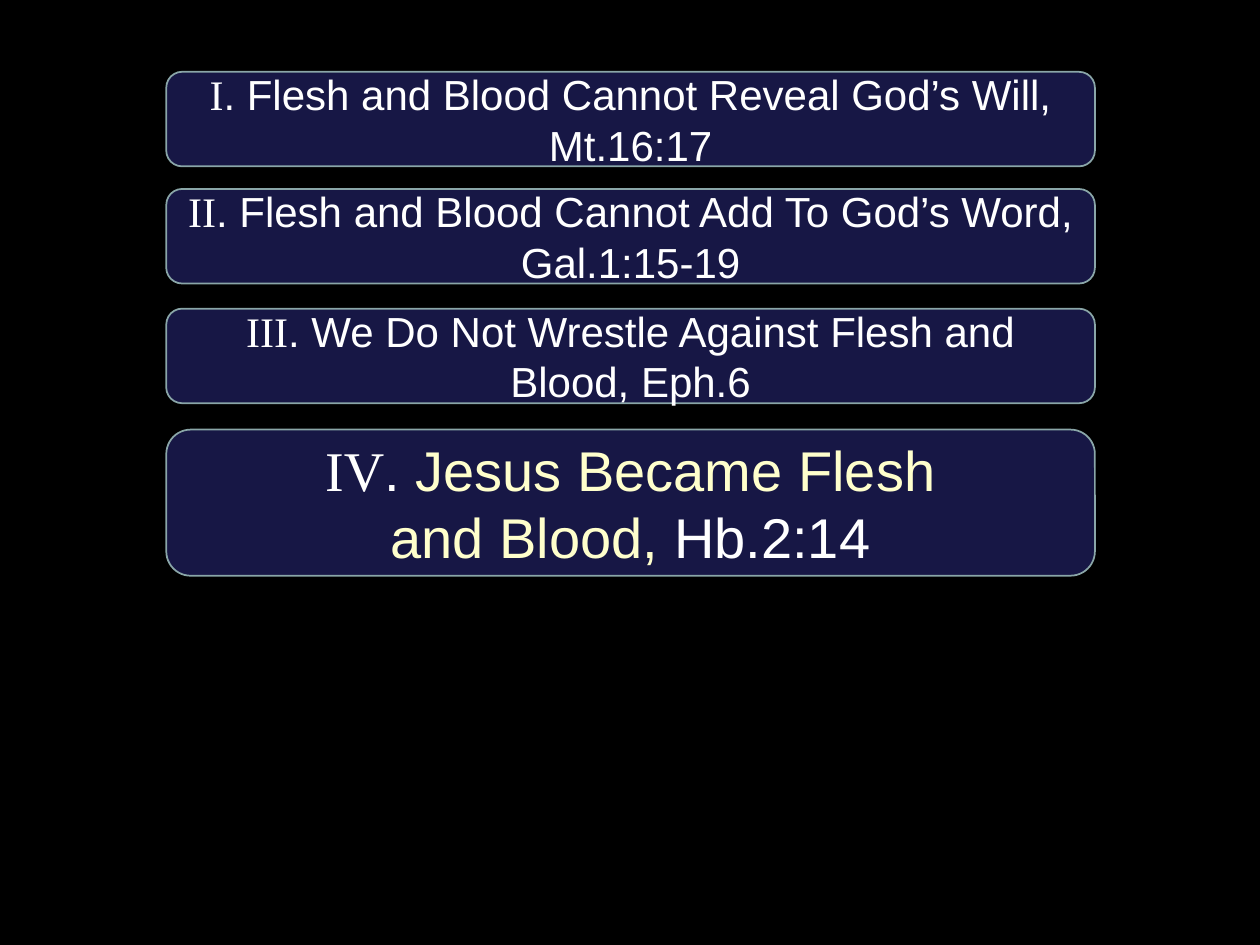
from dataclasses import dataclass

from pptx import Presentation
from pptx.dml.color import RGBColor as RGB
from pptx.enum.shapes import MSO_SHAPE as Shape
from pptx.enum.text import MSO_ANCHOR as Anchor, PP_ALIGN as Align
from pptx.util import Inches, Pt


@dataclass(frozen=True)
class Theme:
    background: RGB = RGB(0x00, 0x00, 0x00)
    fill: RGB = RGB(0x17, 0x17, 0x45)
    border: RGB = RGB(0x8A, 0xA6, 0xA8)
    text: RGB = RGB(0xFF, 0xFF, 0xFF)
    accent: RGB = RGB(0xFF, 0xFF, 0xCC)
    body_font: str = "Arial"
    numeral_font: str = "Times New Roman"
    normal_size: int = 24
    large_size: int = 32


THEME = Theme()
LEFT, WIDTH = 1.32, 7.37


@dataclass(frozen=True)
class Point:
    numeral: str
    top: float
    text: str
    highlight: str = ""
    height: float = 0.75
    size: int = THEME.normal_size


POINTS = [
    Point("I", 0.57, "Flesh and Blood Cannot Reveal God’s Will, Mt.16:17"),
    Point("II", 1.5, "Flesh and Blood Cannot Add To God’s Word, Gal.1:15-19"),
    Point("III", 2.45, "We Do Not Wrestle Against Flesh and Blood, Eph.6"),
    Point("IV", 3.41, "Hb.2:14", "Jesus Became Flesh\nand Blood, ",
          height=1.16, size=THEME.large_size),
]


def add_text(p, text: str, *, size: int, font: str = THEME.body_font,
             color: RGB = THEME.text) -> None:
    for i, line in enumerate(text.split("\n")):
        if i:
            p.add_line_break()
        r = p.add_run()
        r.text = line
        r.font.size = Pt(size)
        r.font.name = font
        r.font.color.rgb = color


def add_point(s, point: Point) -> None:
    sp = s.shapes.add_shape(Shape.ROUNDED_RECTANGLE, Inches(LEFT), Inches(point.top),
                            Inches(WIDTH), Inches(point.height))
    sp.shadow.inherit = False
    sp.fill.solid()
    sp.fill.fore_color.rgb = THEME.fill
    sp.line.color.rgb = THEME.border
    sp.line.width = Pt(1)
    tf = sp.text_frame
    tf.word_wrap = True
    tf.vertical_anchor = Anchor.MIDDLE
    p = tf.paragraphs[0]
    p.alignment = Align.CENTER
    add_text(p, point.numeral, size=point.size, font=THEME.numeral_font)
    if point.highlight:
        add_text(p, ". ", size=point.size)
        add_text(p, point.highlight, size=point.size, color=THEME.accent)
        add_text(p, point.text, size=point.size)
    else:
        add_text(p, f". {point.text}", size=point.size)


def main() -> None:
    prs = Presentation()
    prs.slide_width, prs.slide_height = Inches(10), Inches(7.5)
    s = prs.slides.add_slide(prs.slide_layouts[6])
    s.background.fill.solid()
    s.background.fill.fore_color.rgb = THEME.background
    for point in POINTS:
        add_point(s, point)
    prs.save("out.pptx")


if __name__ == "__main__":
    main()
